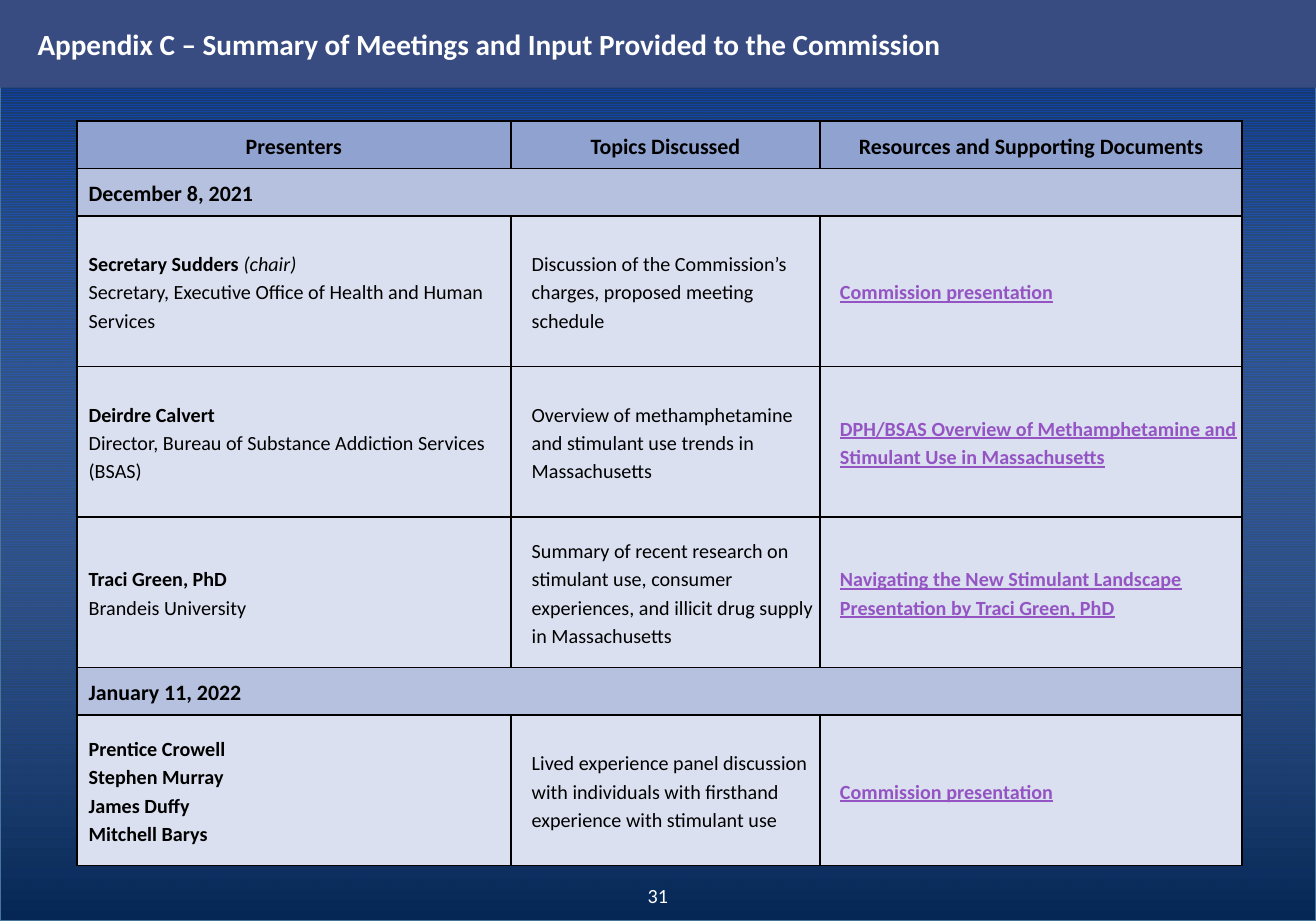
from lxml import etree
from pptx import Presentation
from pptx.dml.color import RGBColor
from pptx.enum.dml import MSO_PATTERN
from pptx.enum.shapes import MSO_SHAPE
from pptx.enum.text import MSO_ANCHOR, PP_ALIGN
from pptx.oxml.ns import qn
from pptx.util import Pt

RECT = MSO_SHAPE.RECTANGLE
LIGHT_HORIZONTAL = MSO_PATTERN.LIGHT_HORIZONTAL
LEFT, CENTER = PP_ALIGN.LEFT, PP_ALIGN.CENTER
MIDDLE = MSO_ANCHOR.MIDDLE

WIDTH, HEIGHT = 720, 504
COLORS = {
    "black": "000000", "white": "FFFFFF", "link": "9454C3",
    "banner": "384C81", "header": "90A2CF", "date": "B5C1DF", "body": "DAE0EF",
    "stripe": "003399", "ground": "072C62",
    "deep": "062756", "sky": "B6D1FA", "frame": "49749B",
}
COLUMNS = [237.5, 169.3, 230.8]
INDENTS = [4.5, 9.4, 8.8]
DATE_HEIGHT, BODY_HEIGHT = 26, 82.4

HEADERS = ["Presenters", "Topics Discussed", "Resources and Supporting Documents"]
MEETINGS = [
    ("December 8, 2021", [
        (["Secretary Sudders "], " (chair)".strip(),
         "Secretary, Executive Office of Health and Human Services",
         "Discussion of the Commission’s charges, proposed meeting schedule",
         "Commission presentation"),
        (["Deirdre Calvert"], "",
         "Director, Bureau of Substance Addiction Services (BSAS)",
         "Overview of methamphetamine and stimulant use trends in Massachusetts",
         "DPH/BSAS Overview of Methamphetamine and Stimulant Use in Massachusetts"),
        (["Traci Green, PhD"], "",
         "Brandeis University",
         "Summary of recent research on stimulant use, consumer experiences, "
         "and illicit drug supply in Massachusetts",
         "Navigating the New Stimulant Landscape Presentation by Traci Green, PhD"),
    ]),
    ("January 11, 2022", [
        (["Prentice Crowell", "Stephen Murray", "James Duffy", "Mitchell Barys"], "", "",
         "Lived experience panel discussion with individuals with firsthand "
         "experience with stimulant use",
         "Commission presentation"),
    ]),
]


def rgb(name):
    return RGBColor.from_string(COLORS[name])


def write(p, text, size=11, color="black", bold=False, italic=False,
          underline=False, align=LEFT, indent=0, spacing=1.0):
    p.alignment = align
    p.line_spacing = spacing
    p._p.get_or_add_pPr().set("marL", str(Pt(indent)))
    r = p.add_run()
    r.text = text
    r.font.name = "Calibri"
    r.font.size = Pt(size)
    r.font.color.rgb = rgb(color)
    r.font.bold = bold
    r.font.italic = italic
    r.font.underline = underline


class Deck:
    def __init__(self):
        self.prs = Presentation()
        self.prs.slide_width, self.prs.slide_height = Pt(WIDTH), Pt(HEIGHT)
        self.s = self.prs.slides.add_slide(self.prs.slide_layouts[6])

    def background(self):
        fill = self.s.background.fill
        fill.patterned()
        fill.pattern = LIGHT_HORIZONTAL
        fill.fore_color.rgb = rgb("stripe")
        fill.back_color.rgb = rgb("ground")

    def rect(self, x, y, w, h):
        sp = self.s.shapes.add_shape(RECT, Pt(x), Pt(y), Pt(w), Pt(h))
        sp.shadow.inherit = False
        return sp

    def fade(self):
        sp = self.rect(0, 0, WIDTH, HEIGHT)
        sp.line.color.rgb = rgb("frame")
        sp.line.width = Pt(1.5)
        sp.fill.gradient()
        sp.fill.gradient_angle = 90
        for stop, position, name in zip(sp.fill.gradient_stops, (0, 1), ("deep", "sky")):
            stop.position = position
            stop.color.rgb = rgb(name)
        last = list(sp._element.iter(qn("a:gs")))[-1]
        etree.SubElement(last[0], qn("a:alpha"), val="0")

    def banner(self, text):
        sp = self.rect(0, 0, WIDTH, 48)
        sp.fill.solid()
        sp.fill.fore_color.rgb = rgb("banner")
        sp.line.fill.background()
        tf = sp.text_frame
        tf.vertical_anchor = MIDDLE
        write(tf.paragraphs[0], text, size=16, color="white", bold=True, indent=13.5)

    def label(self, x, y, w, h, text):
        tf = self.s.shapes.add_textbox(Pt(x), Pt(y), Pt(w), Pt(h)).text_frame
        tf.word_wrap = True
        write(tf.paragraphs[0], text, color="white", align=CENTER)

    def table(self, x, y, heights):
        shape = self.s.shapes.add_table(len(heights), len(COLUMNS), Pt(x), Pt(y),
                                        Pt(sum(COLUMNS)), Pt(sum(heights)))
        table = shape.table
        for column, width in zip(table.columns, COLUMNS):
            column.width = Pt(width)
        for row, height in zip(table.rows, heights):
            row.height = Pt(height)
        return table

    def cell(self, cell, fill):
        cell.margin_left = cell.margin_right = Pt(2)
        cell.margin_top = cell.margin_bottom = Pt(1)
        cell.vertical_anchor = MIDDLE
        tcPr = cell._tc.get_or_add_tcPr()
        for side in ("a:lnL", "a:lnR", "a:lnT", "a:lnB"):
            ln = etree.SubElement(tcPr, qn(side), w=str(Pt(1)))
            solid = etree.SubElement(ln, qn("a:solidFill"))
            etree.SubElement(solid, qn("a:srgbClr"), val=COLORS["black"])
        cell.fill.solid()
        cell.fill.fore_color.rgb = rgb(fill)
        return cell.text_frame

    def header_row(self, table):
        for cell, text in zip(table.rows[0].cells, HEADERS):
            tf = self.cell(cell, "header")
            write(tf.paragraphs[0], text, size=12, bold=True, align=CENTER, spacing=1.15)

    def date_row(self, table, row, date):
        frames = [self.cell(cell, "date") for cell in table.rows[row].cells]
        table.cell(row, 0).merge(table.cell(row, len(COLUMNS) - 1))
        write(frames[0].paragraphs[0], date, size=12, bold=True,
              indent=INDENTS[0], spacing=1.15)

    def body_row(self, table, row, names, note, role, topic, resource):
        who, what, link = [self.cell(cell, "body") for cell in table.rows[row].cells]
        style = {"indent": INDENTS[0], "spacing": 1.15}
        for i, name in enumerate(names):
            p = who.add_paragraph() if i else who.paragraphs[0]
            write(p, name, bold=True, **style)
        if note:
            write(p, note, italic=True, **style)
        if role:
            write(who.add_paragraph(), role, **style)
        write(what.paragraphs[0], topic, indent=INDENTS[1], spacing=1.15)
        write(link.paragraphs[0], resource, color="link", bold=True, underline=True,
              indent=INDENTS[2], spacing=1.15)

    def meetings(self, x, y):
        heights = [DATE_HEIGHT]
        for _, sessions in MEETINGS:
            heights += [DATE_HEIGHT] + [BODY_HEIGHT] * len(sessions)
        table = self.table(x, y, heights)
        self.header_row(table)
        row = 1
        for date, sessions in MEETINGS:
            self.date_row(table, row, date)
            for i, session in enumerate(sessions, row + 1):
                self.body_row(table, i, *session)
            row += 1 + len(sessions)


def main():
    deck = Deck()
    deck.background()
    deck.fade()
    deck.meetings(42, 66.2)
    deck.banner("Appendix C – Summary of Meetings and Input Provided to the Commission")
    deck.label(300, 480, 120, 24, "31")
    deck.prs.save("out.pptx")


if __name__ == "__main__":
    main()
